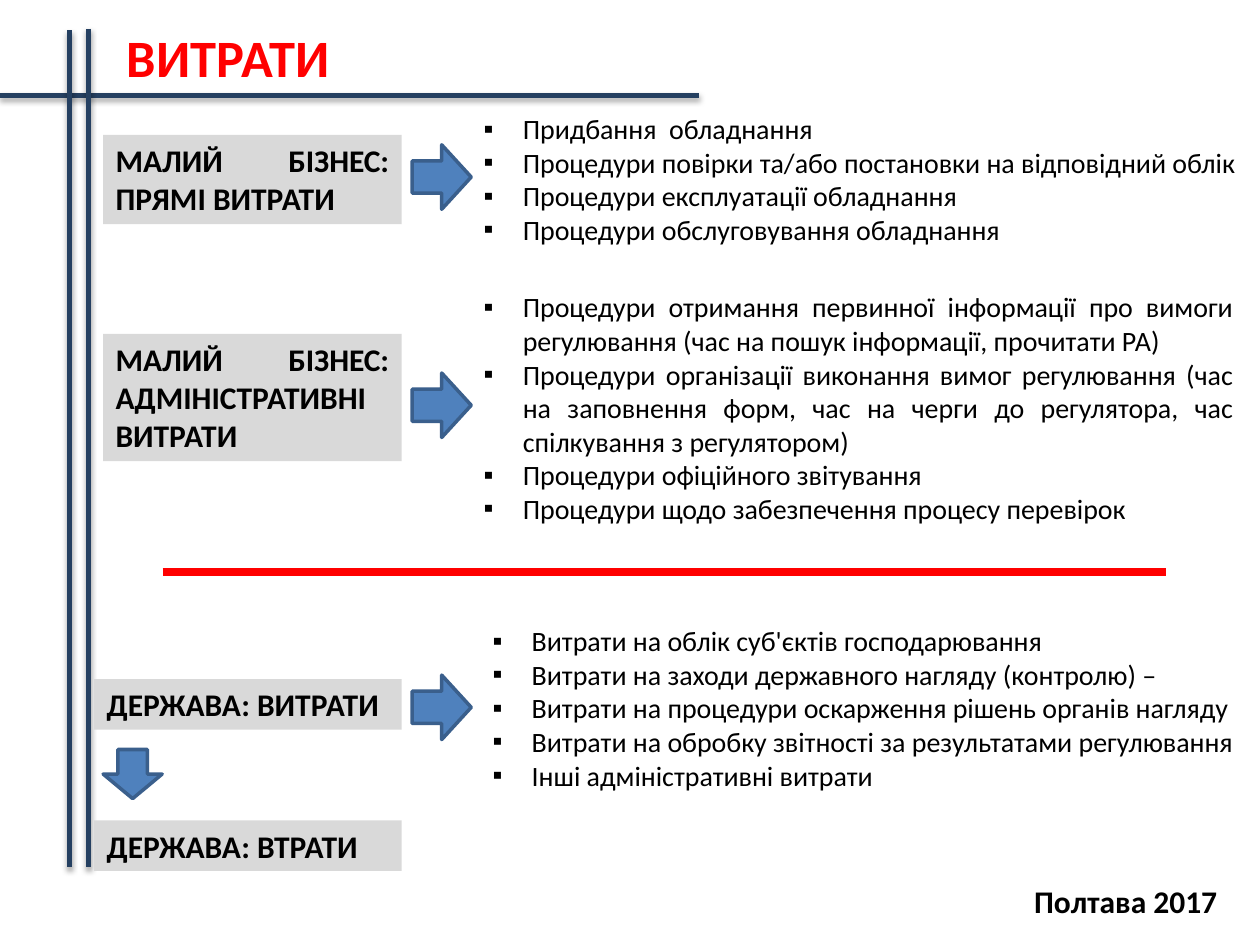
from lxml import etree
from pptx import Presentation
from pptx.dml.color import RGBColor
from pptx.enum import shapes, text
from pptx.oxml import parse_xml
from pptx.oxml.ns import nsdecls, qn
from pptx.util import Cm, Pt

COLORS = {"navy": "254061", "red": "FF0000", "black": "000000",
          "gray": "D9D9D9", "blue": "4F81BD", "outline": "3A5F8C"}
FONT = "Calibri"
JUSTIFY, LEFT, CENTER = (text.PP_ALIGN.JUSTIFY, text.PP_ALIGN.LEFT,
                         text.PP_ALIGN.CENTER)

# All places are in centimetres: left, top, width, height
TITLE = ("ВИТРАТИ", (2.31, 0.38, 16.46, 1.55))
FOOTER = ("Полтава 2017", (19.99, 17.65, 5.41, 1.02))

# start x, start y, end x, end y
FRAME_LINES = [(0, 1.93, 14.1, 1.93), (1.4, 0.61, 1.4, 17.48),
               (1.78, 0.58, 1.78, 17.48)]
DIVIDER = (3.28, 11.53, 23.5, 11.53)

LABELS = [
    ("МАЛИЙ БІЗНЕС: ПРЯМІ ВИТРАТИ", (2.08, 2.72, 6.02, 1.8)),
    ("МАЛИЙ БІЗНЕС: АДМІНІСТРАТИВНІ  ВИТРАТИ", (2.08, 6.73, 6.02, 2.57)),
    ("ДЕРЖАВА: ВИТРАТИ", (1.9, 13.69, 6.2, 1.02)),
    ("ДЕРЖАВА: ВТРАТИ", (1.9, 16.54, 6.2, 1.02)),
]

RIGHT_ARROW_TOPS = [2.92, 7.52, 13.61]
DOWN_ARROW = (2.08, 15.11, 1.19, 0.99)

COST_LISTS = [
    ((9.5, 2.13, 15.82, 3), JUSTIFY, [
        "Придбання  обладнання",
        "Процедури повірки та/або постановки на відповідний облік",
        "Процедури експлуатації обладнання",
        "Процедури обслуговування обладнання"]),
    ((9.5, 5.72, 15.62, 5.05), JUSTIFY, [
        "Процедури отримання первинної інформації про вимоги регулювання "
        "(час на пошук інформації, прочитати РА)",
        "Процедури організації виконання вимог регулювання (час на "
        "заповнення форм, час на черги до регулятора, час спілкування з "
        "регулятором)",
        "Процедури офіційного звітування",
        "Процедури щодо забезпечення процесу перевірок"]),
    ((9.68, 12.45, 15.72, 3.68), LEFT, [
        "Витрати на облік суб'єктів господарювання",
        "Витрати на заходи державного нагляду (контролю) –",
        "Витрати на процедури оскарження рішень органів нагляду",
        "Витрати на обробку звітності за результатами регулювання",
        "Інші адміністративні витрати"]),
]

SHADOW = f"""<a:effectLst {nsdecls('a')}>
  <a:outerShdw blurRad="{Pt(3.1)}" dist="{Pt(1.8)}" dir="5400000" rotWithShape="0">
    <a:srgbClr val="{COLORS['black']}"><a:alpha val="35000"/></a:srgbClr>
  </a:outerShdw>
</a:effectLst>"""
NO_SHADOW = f"<a:effectLst {nsdecls('a')}/>"


def color(name):
    return RGBColor.from_string(COLORS[name])


def place(box):
    return [Cm(value) for value in box]


def add_line(slide, ends, color_name, width, effect):
    line = slide.shapes.add_connector(shapes.MSO_CONNECTOR.STRAIGHT, *place(ends))
    line.line.color.rgb = color(color_name)
    line.line.width = Pt(width)
    line._element.spPr.append(parse_xml(effect))


def add_block(slide, preset, box, fill):
    shape = slide.shapes.add_shape(preset, *place(box))
    shape.shadow.inherit = False
    shape.fill.solid()
    shape.fill.fore_color.rgb = color(fill)
    shape.line.fill.background()
    return shape


def add_arrow(slide, preset, box):
    arrow = add_block(slide, preset, box, "blue")
    arrow.line.color.rgb = color("outline")
    arrow.line.width = Pt(2)


def add_bullet(paragraph):
    properties = paragraph._p.get_or_add_pPr()
    properties.set("marL", str(Cm(0.79)))
    properties.set("indent", str(-Cm(0.79)))
    etree.SubElement(properties, qn("a:buFont"), typeface="Wingdings")
    properties[-1].set("typeface", "Arial")
    etree.SubElement(properties, qn("a:buChar"), char="▪")


def write(shape, lines, size, align, color_name="black", bold=False, bullets=False):
    frame = shape.text_frame
    frame.word_wrap = True
    frame.vertical_anchor = text.MSO_ANCHOR.TOP
    frame.text = "\n".join(lines)
    for paragraph in frame.paragraphs:
        paragraph.alignment = align
        if bullets:
            add_bullet(paragraph)
        for run in paragraph.runs:
            run.font.name = FONT
            run.font.size = Pt(size)
            run.font.bold = bold
            run.font.color.rgb = color(color_name)


def main():
    presentation = Presentation()
    presentation.slide_width, presentation.slide_height = Cm(25.4), Cm(19.05)
    slide = presentation.slides.add_slide(presentation.slide_layouts[6])

    for ends in FRAME_LINES:
        add_line(slide, ends, "navy", 3, SHADOW)
    add_line(slide, DIVIDER, "red", 4.5, NO_SHADOW)

    title, box = TITLE
    write(slide.shapes.add_textbox(*place(box)), [title], 30, LEFT, "red", bold=True)

    for label, box in LABELS:
        block = add_block(slide, shapes.MSO_SHAPE.RECTANGLE, box, "gray")
        write(block, [label], 18, JUSTIFY, bold=True)

    for top in RIGHT_ARROW_TOPS:
        add_arrow(slide, shapes.MSO_SHAPE.RIGHT_ARROW, (8.31, top, 1.19, 1.3))
    add_arrow(slide, shapes.MSO_SHAPE.DOWN_ARROW, DOWN_ARROW)

    for box, align, costs in COST_LISTS:
        write(slide.shapes.add_textbox(*place(box)), costs, 16, align, bullets=True)

    footer, box = FOOTER
    write(slide.shapes.add_textbox(*place(box)), [footer], 18, CENTER, bold=True)

    presentation.save("out.pptx")


if __name__ == "__main__":
    main()
